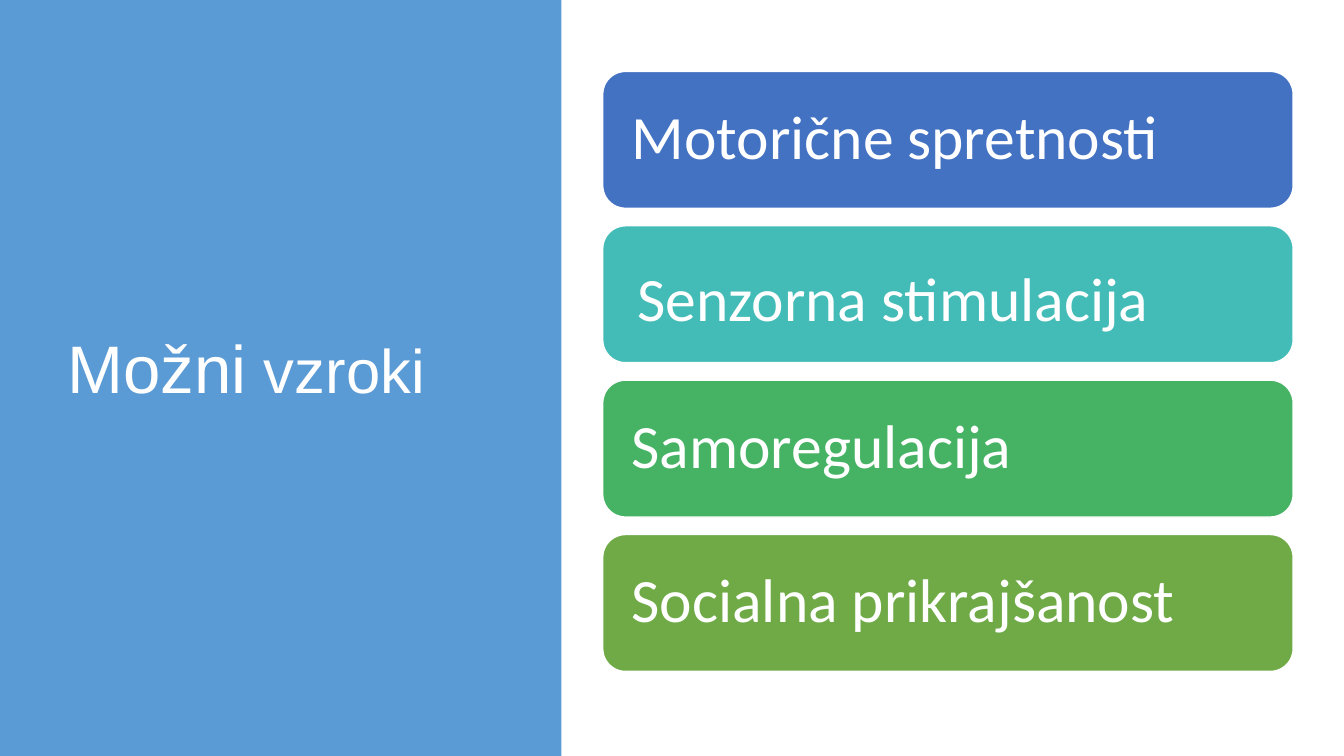
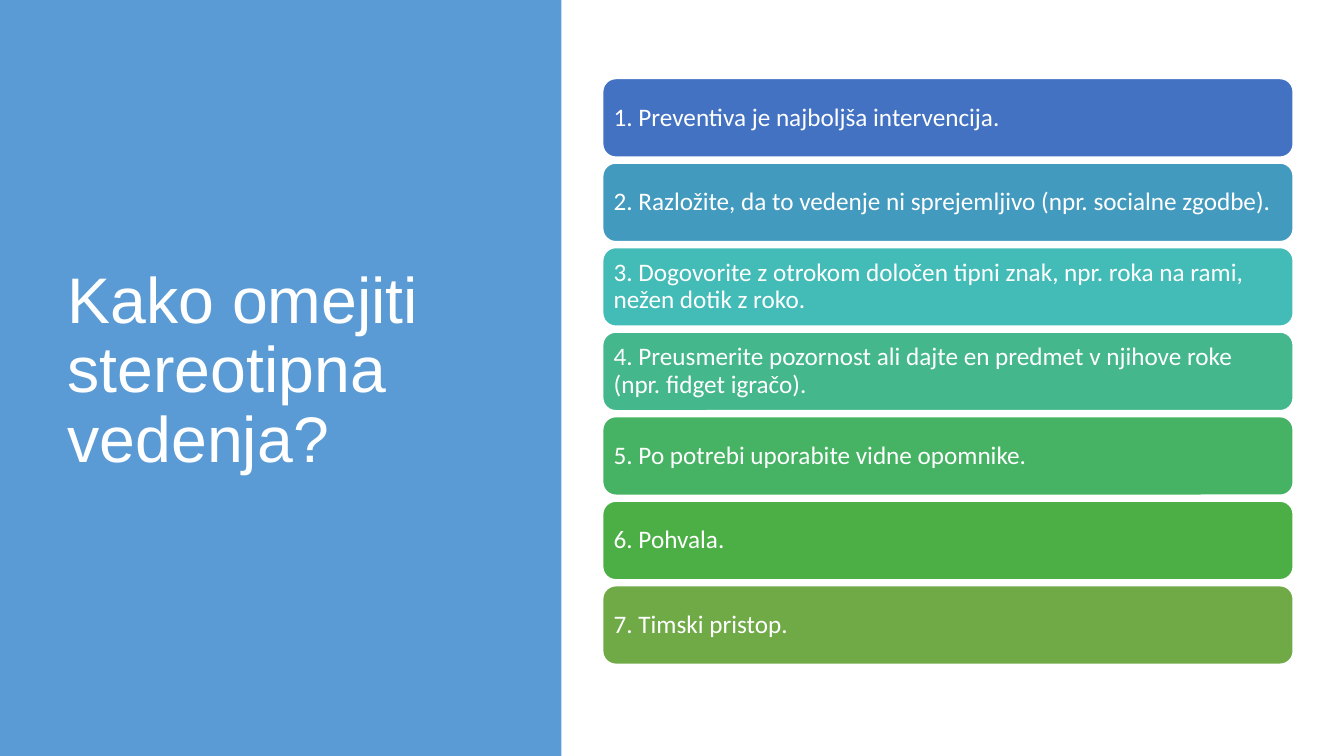
from pptx import Presentation
from pptx import util as u
from pptx.dml.color import RGBColor
from pptx.enum import shapes, text

WHITE, PANEL = "FFFFFF", "5B9BD5"
RAMP = ["4372C3", "439ABF", "43BCB8", "44B78C", "45B363", "4CAF46", "6FAA47"]
TITLE_FONT, BODY_FONT = "Arial", "Calibri"
PANEL_WIDTH = 14.15
BAR_LEFT, BAR_WIDTH, BARS_MIDDLE = 15.19, 17.4, 9.36

CAUSES = ["Motorične spretnosti", "Senzorna stimulacija", "Samoregulacija",
          "Socialna prikrajšanost"]
STEPS = [
    "1. Preventiva je najboljša intervencija.",
    "2. Razložite, da to vedenje ni sprejemljivo (npr. socialne zgodbe).",
    "3. Dogovorite z otrokom določen tipni znak, npr. roka na rami, nežen dotik z roko.",
    "4. Preusmerite pozornost ali dajte en predmet v njihove roke (npr. fidget igračo).",
    "5. Po potrebi uporabite vidne opomnike.",
    "6. Pohvala.",
    "7. Timski pristop.",
]


def rgb(value):
    return RGBColor.from_string(value)


class Deck:
    def __init__(self):
        self.prs = Presentation()
        self.prs.slide_width, self.prs.slide_height = u.Cm(33.87), u.Cm(19.05)
        self.s = None

    def box(self, kind, left, top, width, height, fill):
        sp = self.s.shapes.add_shape(kind, u.Cm(left), u.Cm(top), u.Cm(width), u.Cm(height))
        sp.shadow.inherit = False
        sp.fill.solid()
        sp.fill.fore_color.rgb = rgb(fill)
        sp.line.fill.background()
        return sp

    def style(self, p, font):
        p.alignment = text.PP_ALIGN.LEFT
        p.line_spacing = 0.9
        p.font.name = font
        p.font.color.rgb = rgb(WHITE)

    def slide(self, title_runs, title_width):
        """Start a slide with its side panel and a title of (text, size) runs."""
        self.s = self.prs.slides.add_slide(self.prs.slide_layouts[5])
        title = self.s.shapes.title
        panel = self.box(shapes.MSO_SHAPE.RECTANGLE, 0, 0, PANEL_WIDTH, 19.05, PANEL)
        title.element.addprevious(panel.element)
        title.left, title.top = u.Cm(1.45), u.Cm(1.73)
        title.width, title.height = u.Cm(title_width), u.Cm(15.29)
        tf = title.text_frame
        tf.word_wrap = True
        tf.auto_size = text.MSO_AUTO_SIZE.NONE
        tf.vertical_anchor = text.MSO_ANCHOR.MIDDLE
        p = tf.paragraphs[0]
        self.style(p, TITLE_FONT)
        for words, size in title_runs:
            r = p.add_run()
            r.text = words
            r.font.size = u.Pt(size)

    def bars(self, labels, colors, height, gap, size, inset):
        """Stack the labels as bars centred on BARS_MIDDLE and return the shapes."""
        pitch = height + gap
        top = BARS_MIDDLE - (len(labels) * pitch - gap) / 2
        stack = []
        for i, (label, color) in enumerate(zip(labels, colors)):
            sp = self.box(shapes.MSO_SHAPE.ROUNDED_RECTANGLE,
                          BAR_LEFT, top + i * pitch, BAR_WIDTH, height, color)
            sp.line.color.rgb = rgb(WHITE)
            sp.line.width = u.Pt(1)
            tf = sp.text_frame
            tf.word_wrap = True
            tf.vertical_anchor = text.MSO_ANCHOR.MIDDLE
            tf.margin_left = tf.margin_right = u.Cm(inset)
            tf.margin_top = tf.margin_bottom = u.Cm(inset)
            p = tf.paragraphs[0]
            p.text = label
            self.style(p, BODY_FONT)
            p.font.size = u.Pt(size)
            stack.append(sp)
        return stack


def main():
    deck = Deck()

    deck.slide([("Možni", 48), (" vzroki", 44)], 10.57)
    causes = deck.bars(CAUSES, RAMP[::2], height=3.45, gap=0.44, size=44, inset=0.56)
    # The second label sits slightly right of and below the others
    tf = causes[1].text_frame
    tf.margin_left, tf.margin_top = u.Cm(0.71), u.Cm(0.92)

    deck.slide([("Kako omejiti stereotipna vedenja?", 46)], 11.73)
    deck.bars(STEPS, RAMP, height=1.98, gap=0.15, size=18, inset=0.18)

    deck.prs.save("out.pptx")


if __name__ == "__main__":
    main()
